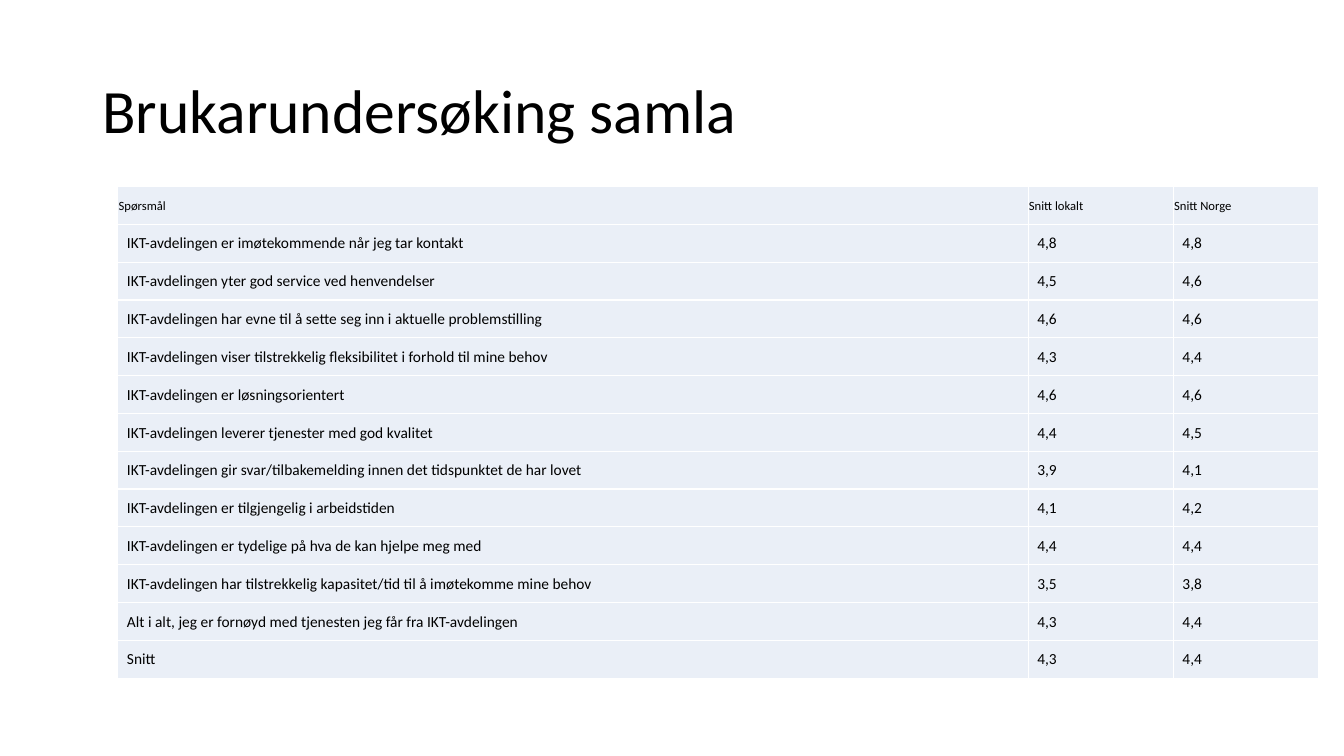
from lxml import etree
from pptx import Presentation
from pptx.dml.color import RGBColor
from pptx.enum.text import MSO_ANCHOR
from pptx.oxml.ns import qn
from pptx.util import Cm, Pt

MIDDLE = MSO_ANCHOR.MIDDLE
TITLE_ONLY = 5
FONT = "Calibri"
COLORS = {"text": "000000", "fill": "EAEFF7", "line": "FFFFFF"}
WIDTHS = (22.94, 3.66, 3.66)
HEAD = ("Spørsmål", "Snitt lokalt", "Snitt Norge")
SCORES = (
    ("IKT-avdelingen er imøtekommende når jeg tar kontakt", "4,8", "4,8"),
    ("IKT-avdelingen yter god service ved henvendelser", "4,5", "4,6"),
    ("IKT-avdelingen har evne til å sette seg inn i aktuelle problemstilling", "4,6", "4,6"),
    ("IKT-avdelingen viser tilstrekkelig fleksibilitet i forhold til mine behov", "4,3", "4,4"),
    ("IKT-avdelingen er løsningsorientert", "4,6", "4,6"),
    ("IKT-avdelingen leverer tjenester med god kvalitet", "4,4", "4,5"),
    ("IKT-avdelingen gir svar/tilbakemelding innen det tidspunktet de har lovet", "3,9", "4,1"),
    ("IKT-avdelingen er tilgjengelig i arbeidstiden", "4,1", "4,2"),
    ("IKT-avdelingen er tydelige på hva de kan hjelpe meg med", "4,4", "4,4"),
    ("IKT-avdelingen har tilstrekkelig kapasitet/tid til å imøtekomme mine behov", "3,5", "3,8"),
    ("Alt i alt, jeg er fornøyd med tjenesten jeg får fra IKT-avdelingen", "4,3", "4,4"),
    ("Snitt", "4,3", "4,4"),
)


def color(name):
    """Return the named colour."""
    return RGBColor.from_string(COLORS[name])


def assign(target, values):
    """Set each attribute in values on the target."""
    for name, value in values.items():
        setattr(target, name, value)


def style(para, size):
    """Set the font of a paragraph."""
    assign(para.font, {"name": FONT, "size": Pt(size), "bold": False})
    para.font.color.rgb = color("text")


def add_title(slide, text):
    """Fill and place the title."""
    title = slide.shapes.title
    assign(title, {"left": Cm(2.33), "top": Cm(1.01), "width": Cm(29.21), "height": Cm(3.68)})
    frame = title.text_frame
    assign(frame, {"text": text, "vertical_anchor": MIDDLE, "word_wrap": True})
    para = frame.paragraphs[0]
    assign(para, {"line_spacing": 0.9, "alignment": 1})
    style(para, 44)


def add_borders(cell):
    """Draw a thin line on each side of a cell."""
    props = cell._tc.get_or_add_tcPr()
    for index, side in enumerate(("lnL", "lnR", "lnT", "lnB")):
        line = etree.Element(qn(f"a:{side}"), w=str(Pt(1)))
        fill = etree.SubElement(line, qn("a:solidFill"))
        etree.SubElement(fill, qn("a:srgbClr"), val=COLORS["line"])
        props.insert(index, line)


def fill_cell(cell, text, size, indent):
    """Write and format one table cell."""
    assign(cell, {
        "text": text, "vertical_anchor": MIDDLE, "margin_left": Cm(indent),
        "margin_top": Cm(0.02), "margin_right": Cm(0.02), "margin_bottom": 0,
    })
    cell.fill.solid()
    cell.fill.fore_color.rgb = color("fill")
    style(cell.text_frame.paragraphs[0], size)
    add_borders(cell)


def add_scores(slide):
    """Add the table of survey scores."""
    rows = (HEAD, *SCORES)
    table = slide.shapes.add_table(
        len(rows), len(HEAD), Cm(2.97), Cm(4.7), Cm(sum(WIDTHS)), Cm(12.4)
    ).table
    for column, width in zip(table.columns, WIDTHS):
        column.width = Cm(width)
    for top, row in enumerate(rows):
        size, indent = (11, 0.23) if top else (9, 0.02)
        for left, text in enumerate(row):
            fill_cell(table.cell(top, left), text, size, indent)


def main():
    """Build and save the slide."""
    deck = Presentation()
    assign(deck, {"slide_width": Cm(33.87), "slide_height": Cm(19.05)})
    slide = deck.slides.add_slide(deck.slide_layouts[TITLE_ONLY])
    add_title(slide, "Brukarundersøking samla")
    add_scores(slide)
    deck.save("out.pptx")


if __name__ == "__main__":
    main()
